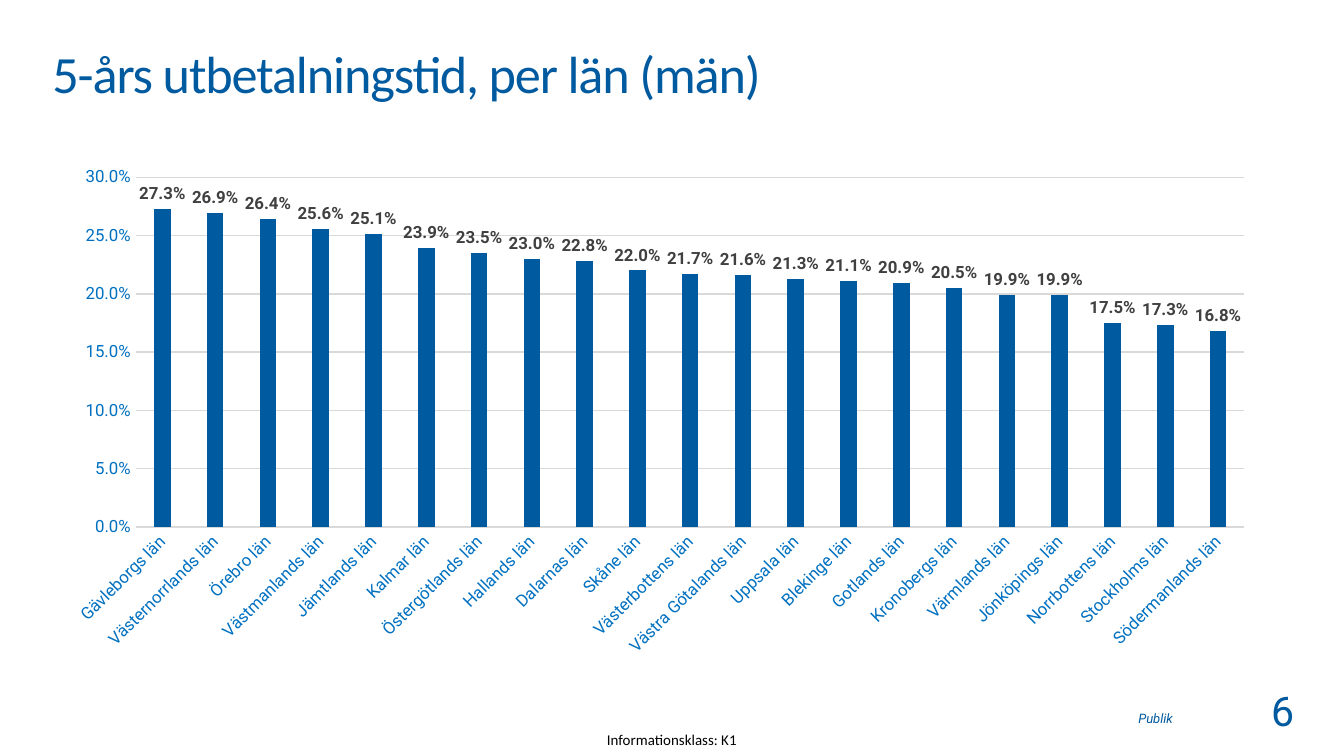
from pptx import Presentation
from pptx.chart.data import CategoryChartData as ChartData
from pptx.dml.color import RGBColor
from pptx.enum.chart import XL_CHART_TYPE as ChartType
from pptx.enum.chart import XL_LABEL_POSITION as LabelPosition
from pptx.enum.chart import XL_TICK_MARK as TickMark
from pptx.enum.text import MSO_ANCHOR as Anchor
from pptx.enum.text import PP_ALIGN as Align
from pptx.util import Inches, Pt

NAVY = RGBColor(0x00, 0x5A, 0xA0)
BLUE = RGBColor(0x00, 0x70, 0xC0)
BLACK = RGBColor(0x00, 0x00, 0x00)
CHARCOAL = RGBColor(0x40, 0x40, 0x40)
SILVER = RGBColor(0xD9, 0xD9, 0xD9)

SHARES = {
    "Gävleborgs län": 0.273,
    "Västernorrlands län": 0.269,
    "Örebro län": 0.264,
    "Västmanlands län": 0.256,
    "Jämtlands län": 0.251,
    "Kalmar län": 0.239,
    "Östergötlands län": 0.235,
    "Hallands län": 0.23,
    "Dalarnas län": 0.228,
    "Skåne län": 0.22,
    "Västerbottens län": 0.217,
    "Västra Götalands län": 0.216,
    "Uppsala län": 0.213,
    "Blekinge län": 0.211,
    "Gotlands län": 0.209,
    "Kronobergs län": 0.205,
    "Värmlands län": 0.199,
    "Jönköpings län": 0.199,
    "Norrbottens län": 0.175,
    "Stockholms län": 0.173,
    "Södermanlands län": 0.168,
}


def set_font(font, size, color, name="Roboto", bold=False, italic=False):
    font.name = name
    font.size = Pt(size)
    font.color.rgb = color
    font.bold = bold
    font.italic = italic


def write_text(frame, text, align=Align.LEFT, line_spacing=None, tracking=None, **style):
    para = frame.paragraphs[0]
    para.alignment = align
    if line_spacing:
        para.line_spacing = line_spacing
    span = para.add_run()
    span.text = text
    set_font(span.font, **style)
    if tracking:
        span.font._element.set("spc", str(round(tracking * 100)))


class SlideBuilder:
    number_format = "0.0%"
    line_width = Pt(0.75)

    def __init__(self, page):
        self.page = page

    def text(self, place, text, anchor=Anchor.TOP, wrap=True, **style):
        box = self.page.shapes.add_textbox(*map(Inches, place))
        frame = box.text_frame
        frame.margin_left = frame.margin_right = 0
        frame.margin_top = frame.margin_bottom = 0
        frame.word_wrap = wrap
        frame.vertical_anchor = anchor
        write_text(frame, text, **style)

    def axis(self, axis):
        axis.major_tick_mark = axis.minor_tick_mark = TickMark.NONE
        set_font(axis.tick_labels.font, 9, BLUE)

    def line(self, line):
        line.color.rgb = SILVER
        line.width = self.line_width

    def column_chart(self, place, name, shares):
        data = ChartData(number_format=self.number_format)
        data.categories = list(shares)
        data.add_series(name, list(shares.values()))
        chart = self.page.shapes.add_chart(
            ChartType.COLUMN_CLUSTERED, *map(Inches, place), data
        ).chart
        chart.has_legend = False
        chart.has_title = False
        set_font(chart.font, 10, BLACK)

        counties = chart.category_axis
        self.axis(counties)
        self.line(counties.format.line)
        counties._element.txPr.bodyPr.set("rot", str(-45 * 60000))

        scale = chart.value_axis
        self.axis(scale)
        scale.minimum_scale, scale.maximum_scale, scale.major_unit = 0, 0.3, 0.05
        scale.tick_labels.number_format = self.number_format
        scale.tick_labels.number_format_is_linked = False
        scale.format.line.fill.background()
        self.line(scale.major_gridlines.format.line)

        plot = chart.plots[0]
        plot.vary_by_categories = False
        plot.gap_width = 219
        plot.overlap = -27
        columns = plot.series[0]
        columns.format.fill.solid()
        columns.format.fill.fore_color.rgb = NAVY
        labels = columns.data_labels
        labels.show_value = True
        labels.position = LabelPosition.OUTSIDE_END
        labels.number_format = self.number_format
        labels.number_format_is_linked = False
        set_font(labels.font, 9, CHARCOAL, bold=True)


def main():
    deck = Presentation()
    deck.slide_width = Inches(10)
    deck.slide_height = deck.slide_width * 9 // 16
    builder = SlideBuilder(deck.slides.add_slide(deck.slide_layouts[6]))
    builder.text((8.47, 5.24, 0.87, 0.16), "Publik", anchor=Anchor.BOTTOM,
                 size=7, color=NAVY, italic=True)
    builder.text((4.38, 5.38, 1.24, 0.25), "Informationsklass: K1", anchor=Anchor.MIDDLE,
                 align=Align.CENTER, size=8, color=BLACK, name="Calibri")
    builder.text((0.39, 0.4, 9.22, 0.62), "5-års utbetalningstid, per län (män)",
                 line_spacing=0.8, tracking=-0.6, size=28, color=NAVY, name="Calibri")
    builder.text((8.99, 5.1, 0.64, 0.31), "6", wrap=False, align=Align.RIGHT,
                 size=22, color=NAVY)
    builder.column_chart((0.39, 1.17, 9.05, 3.79), "Series 1", SHARES)
    deck.save("out.pptx")


if __name__ == "__main__":
    main()
